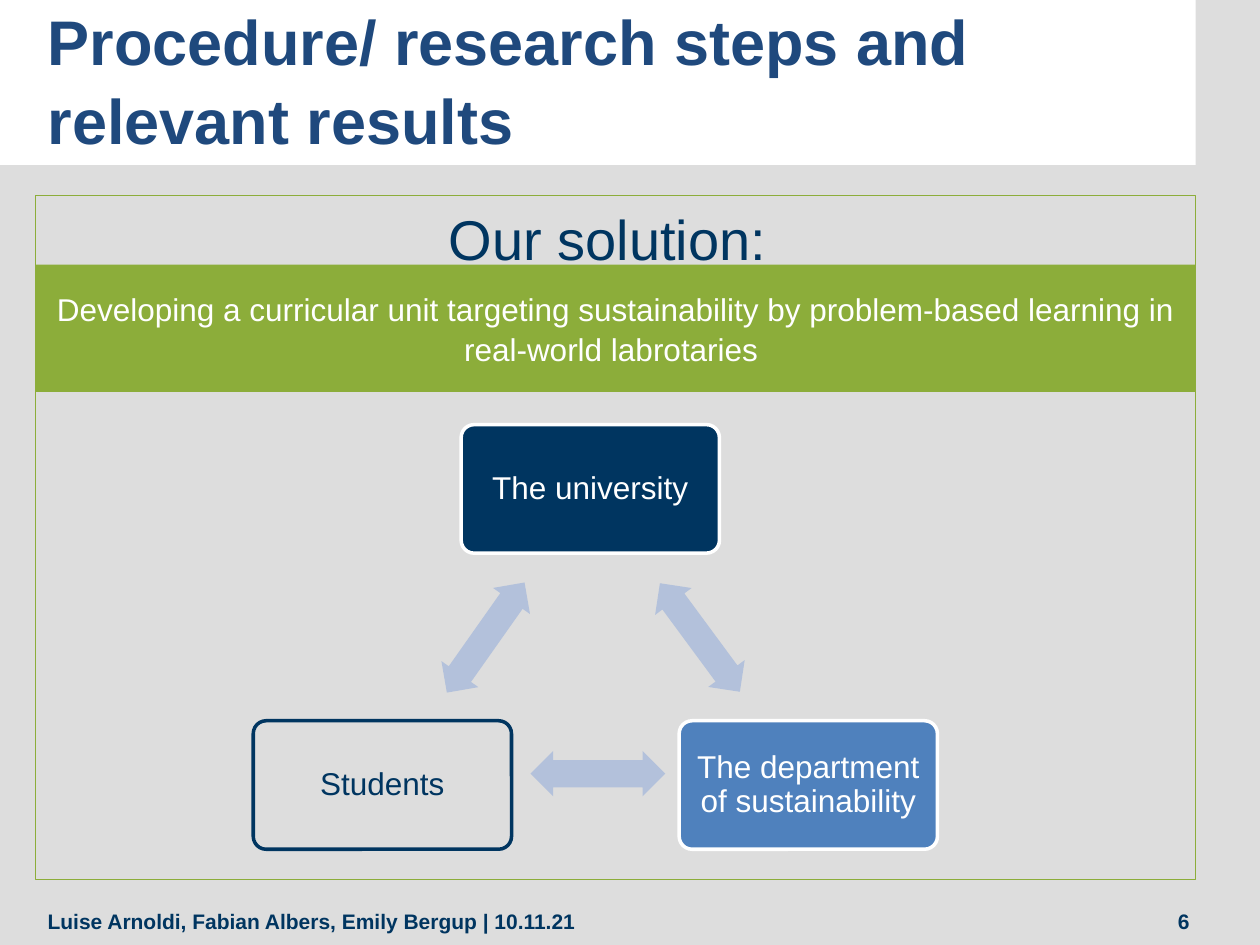
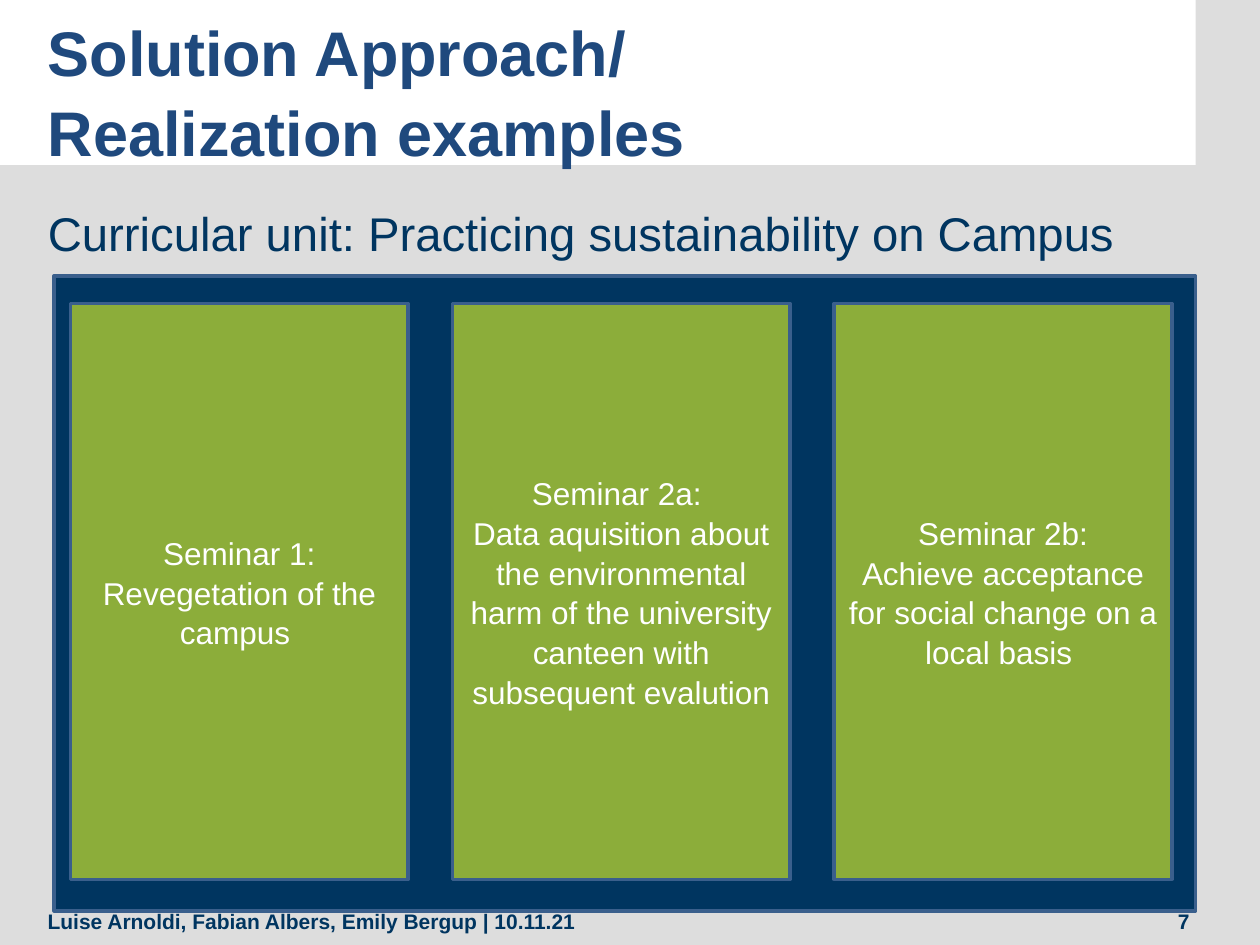
"""Build two slides on a curricular unit for sustainability on campus."""
from pptx import Presentation, util as u
from pptx.dml.color import RGBColor
from pptx.enum import shapes, text
from pptx.oxml.ns import qn
from lxml import etree

NAVY, GREEN, BLUE, GREY, WHITE = "003560", "8CAD3A", "4F81BD", "DDDDDD", "FFFFFF"
TITLE_BLUE, EDGE_BLUE, ARROW_BLUE = "1F497D", "3A5F8C", "B3C1DB"
LEFT, CENTER, RIGHT = text.PP_ALIGN.LEFT, text.PP_ALIGN.CENTER, text.PP_ALIGN.RIGHT
TOP, MIDDLE, BOTTOM = text.MSO_ANCHOR.TOP, text.MSO_ANCHOR.MIDDLE, text.MSO_ANCHOR.BOTTOM
RECT = shapes.MSO_SHAPE.RECTANGLE


def write(box, words, size, color, align=CENTER, anchor=MIDDLE, bold=False, spacing=1.05):
    """Put formatted paragraphs, one per line of words, into a box."""
    frame = box.text_frame
    frame.text = words
    frame.word_wrap = True
    frame.auto_size = text.MSO_AUTO_SIZE.NONE
    frame.vertical_anchor = anchor
    for para in frame.paragraphs:
        if box.is_placeholder:
            props = para._p.get_or_add_pPr()
            props.set("marL", "0")
            props.set("indent", "0")
            etree.SubElement(props, qn("a:buNone"))
        para.alignment = align
        para.line_spacing = spacing
        para.space_before = u.Pt(0)
        para.font.name = "Arial"
        para.font.size = u.Pt(size)
        para.font.bold = bold
        para.font.color.rgb = RGBColor.from_string(color)


def draw(slide, kind, place, fill, line=None, width=2):
    """Add a flat preset shape with an optional outline."""
    shape = slide.shapes.add_shape(kind, *map(u.Inches, place))
    shape.shadow.inherit = False
    shape.fill.solid()
    shape.fill.fore_color.rgb = RGBColor.from_string(fill)
    if line:
        shape.line.color.rgb = RGBColor.from_string(line)
        shape.line.width = u.Pt(width)
    else:
        shape.line.fill.background()
    return shape


deck = Presentation()
deck.slide_width, deck.slide_height = u.Inches(10), u.Inches(7.5)
master = deck.slide_master
master.background.fill.solid()
master.background.fill.fore_color.rgb = RGBColor.from_string(GREY)

pages = []
for title, title_place, heading, heading_place, heading_size, heading_align in [
    ("Procedure/ research steps and relevant results", (0.28, 0.29, 8.44, 1.01),
     "Our solution: ", (0.28, 1.55, 9.21, 5.43), 32, CENTER),
    ("Solution Approach/\vRealization examples", (0.28, 0, 8.5, 1.39),
     "Curricular unit: Practicing sustainability on Campus", (0.28, 1.55, 9.29, 5.75), 27, LEFT),
]:
    page = deck.slides.add_slide(deck.slide_layouts[1])
    title_box, body = page.placeholders
    for box, place in ((title_box, title_place), (body, heading_place)):
        box.left, box.top, box.width, box.height = map(u.Inches, place)
    write(title_box, title, 36, TITLE_BLUE, LEFT, BOTTOM, bold=True)
    write(body, heading, heading_size, NAVY, heading_align, TOP)
    pages.append(page)
solution, seminars = pages

title_band = draw(solution, RECT, (0, 0, 9.49, 1.31), WHITE)
master.shapes.element.insert(2, title_band.element)

frame_line = solution.placeholders[1].line
frame_line.color.rgb = RGBColor.from_string(GREEN)
frame_line.width = u.Pt(0.75)
goal = draw(solution, RECT, (0.28, 2.1, 9.21, 1.01), GREEN)
write(goal, "Developing a curricular unit targeting sustainability by problem-based learning "
      "in real-world labrotaries ", 18, WHITE)

for name, left, top, fill, line, color in [
    ("The university", 3.66, 3.37, NAVY, WHITE, WHITE),
    ("The department of sustainability", 5.39, 5.72, BLUE, WHITE, WHITE),
    ("Students", 2.01, 5.72, GREY, NAVY, NAVY),
]:
    partner = draw(solution, shapes.MSO_SHAPE.ROUNDED_RECTANGLE, (left, top, 2.05, 1.02), fill, line)
    partner.adjustments[0] = 0.1
    frame = partner.text_frame
    frame.margin_left = frame.margin_right = frame.margin_top = frame.margin_bottom = u.Inches(0.07)
    write(partner, name, 18, color, spacing=0.9)

for left, top, angle in [(5.02, 4.88, 53.6), (4.21, 5.96, 180), (3.32, 4.88, 305.2)]:
    arrow = draw(solution, shapes.MSO_SHAPE.LEFT_RIGHT_ARROW, (left, top, 1.07, 0.36), ARROW_BLUE)
    arrow.adjustments[0], arrow.adjustments[1] = 0.6, 0.5
    arrow.rotation = angle

draw(seminars, RECT, (0.43, 2.19, 9.06, 5.04), NAVY, EDGE_BLUE)
for column, words in enumerate([
    "Seminar 1:\nRevegetation of the campus ",
    "Seminar 2a: \nData aquisition about the environmental harm of the university canteen "
    "with subsequent evalution",
    "Seminar 2b:\nAchieve acceptance for social change on a local basis ",
]):
    card = draw(seminars, RECT, (0.56 + 3.03 * column, 2.41, 2.68, 4.57), GREEN, EDGE_BLUE)
    write(card, words, 18, WHITE)

for number, page in enumerate(pages, start=6):
    for words, left, width, align in [
        ("Luise Arnoldi, Fabian Albers, Emily Bergup | 10.11.21", 0.28, 8.66, LEFT),
        (str(number), 8.94, 0.6, RIGHT),
    ]:
        footer = page.shapes.add_textbox(*map(u.Inches, (left, 7.11, width, 0.39)))
        write(footer, words, 12, NAVY, align, bold=True)

deck.save("out.pptx")
